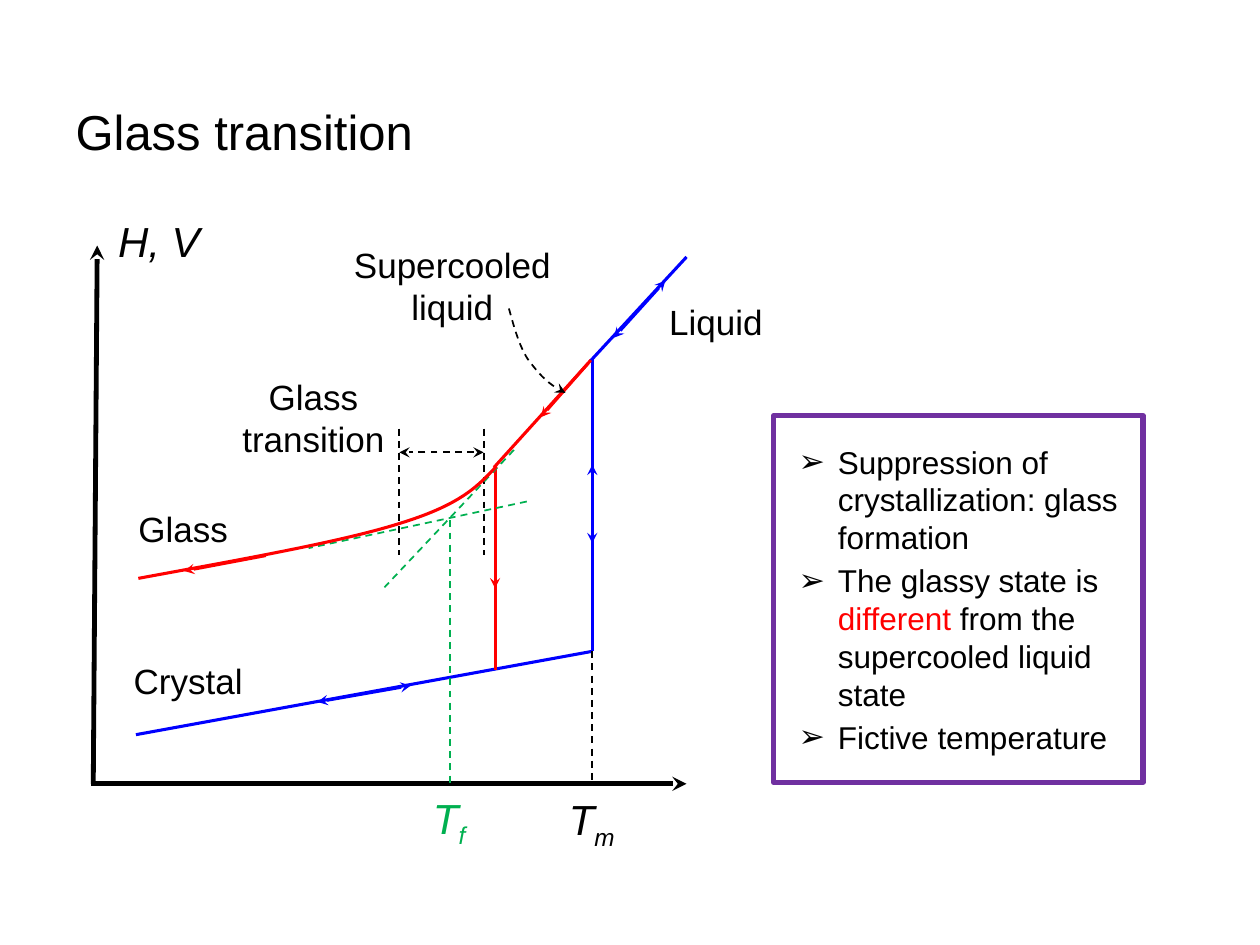
from lxml import etree
from pptx import Presentation
from pptx.dml.color import RGBColor
from pptx.enum.dml import MSO_LINE
from pptx.enum.shapes import MSO_CONNECTOR
from pptx.enum.text import MSO_ANCHOR, MSO_AUTO_SIZE, PP_ALIGN
from pptx.oxml.ns import qn
from pptx.util import Cm, Pt

STRAIGHT = MSO_CONNECTOR.STRAIGHT
DASH = MSO_LINE.DASH
MIDDLE = MSO_ANCHOR.MIDDLE
FIXED = MSO_AUTO_SIZE.NONE
LEFT, CENTER = PP_ALIGN.LEFT, PP_ALIGN.CENTER

BLACK = RGBColor(0, 0, 0)
RED = RGBColor(255, 0, 0)
BLUE = RGBColor(0, 0, 255)
GREEN = RGBColor(0, 0xB0, 0x50)
PURPLE = RGBColor(0x70, 0x30, 0xA0)
FONT = "Arial"

# All positions are in centimetres.
AXIS_Y = 15.8
MELT_X, MELT_Y = 11.94, 13.13
QUENCH_X = 9.98
FICTIVE_X = 9.07
RANGE_LEFT, RANGE_RIGHT = 8.05, 9.75

TITLE = "Glass transition"
POINTS = [
    [("Suppression of crystallization: glass formation", BLACK)],
    [("The glassy state is ", BLACK), ("different", RED),
     (" from the supercooled liquid state", BLACK)],
    [("Fictive temperature", BLACK)],
]

# text, left, top, width, height
STATE_LABELS = [
    ("Supercooled liquid", 6.68, 4.78, 4.88, 1.96),
    ("Crystal", 2.26, 13.18, 3.07, 1.12),
    ("Liquid", 12.9, 5.94, 3.07, 1.12),
    ("Glass", 2.16, 10.11, 3.07, 1.12),
    ("Glass transition", 4.34, 7.44, 3.96, 1.96),
]
# symbol, subscript, left, top, width, alignment, colour
SYMBOLS = [
    ("H, V", "", 2.13, 4.22, 2.18, LEFT, BLACK),
    ("T", "m", 11.18, 15.88, 1.5, CENTER, BLACK),
    ("T", "f", 8.46, 15.85, 1.19, CENTER, GREEN),
]

# start, end, arrowheads
AXES = [
    ((1.83, AXIS_Y), (13.84, AXIS_Y), ["tailEnd"]),
    ((1.88, AXIS_Y), (1.96, 4.95), ["tailEnd"]),
]
BOTH = ["headEnd", "tailEnd"]
EQUILIBRIUM = [
    ((13.84, 5.18), (11.89, 7.29), []),
    ((MELT_X, 7.24), (MELT_X, MELT_Y), []),
    ((MELT_X, MELT_Y), (2.74, 14.81), []),
    ((13.41, 5.66), (12.37, 6.81), BOTH),
    ((MELT_X, 9.37), (MELT_X, 10.95), BOTH),
    ((8.28, 13.82), (6.4, 14.15), BOTH),
]
COOLING = [
    ((11.86, 7.32), (9.96, 9.42), []),
    ((11.91, 7.26), (10.9, 8.41), ["tailEnd"]),
    ((QUENCH_X, 9.45), (QUENCH_X, 13.51), []),
    ((QUENCH_X, 10.54), (QUENCH_X, 11.86), ["tailEnd"]),
    ((5.36, 11.2), (3.71, 11.51), ["tailEnd"]),
]
MARKERS = [
    ((MELT_X, MELT_Y), (MELT_X, 15.72), []),
    ((RANGE_RIGHT, 8.64), (RANGE_RIGHT, 11.18), []),
    ((RANGE_LEFT, 8.64), (RANGE_LEFT, 11.18), []),
    ((RANGE_RIGHT, 9.12), (RANGE_LEFT, 9.12), BOTH),
]
TANGENTS = [
    ((10.62, 10.11), (6.22, 11.05), []),
    ((10.36, 9.07), (7.75, 11.84), []),
    ((FICTIVE_X, 10.49), (FICTIVE_X, 15.82), []),
]
# lines, colour, width in points, dash
LINE_SETS = [
    (AXES, BLACK, 2.75, None),
    (EQUILIBRIUM, BLUE, 1.75, None),
    (COOLING, RED, 1.75, None),
    (MARKERS, BLACK, 1, DASH),
    (TANGENTS, GREEN, 1, DASH),
]

# Start point, then two control points and an end point for each segment
GLASS_CURVE = [(10.01, 9.4), (9.65, 9.78), (9.32, 10.16), (8.1, 10.54),
               (6.91, 10.92), (4.85, 11.28), (2.79, 11.66)]
POINTER_CURVE = [(10.26, 6.22), (10.36, 6.58), (10.46, 6.96), (10.64, 7.24),
                 (10.85, 7.52), (11.07, 7.77), (11.4, 7.92)]


def style_line(shape, color, width, dash=None, heads=()):
    line = shape.line
    line.color.rgb = color
    line.width = Pt(width)
    if dash:
        line.dash_style = dash
    properties = shape._element.spPr
    for head in heads:
        etree.SubElement(properties.find(qn("a:ln")), qn("a:" + head), type="stealth")
    if properties.find(qn("a:effectLst")) is None:
        etree.SubElement(properties, qn("a:effectLst"))


def add_curve(page, points):
    """Draw an open cubic Bezier path."""
    corners = [(Cm(x), Cm(y)) for x, y in points]
    builder = page.shapes.build_freeform(*corners[0])
    builder.add_line_segments(corners[1:], close=False)
    curve = builder.convert_to_shape()
    curve.fill.background()
    curve.shadow.inherit = False
    steps = list(curve._element.iter(qn("a:lnTo")))
    for start in range(0, len(steps), 3):
        first, *others = steps[start:start + 3]
        first.tag = qn("a:cubicBezTo")
        for step in others:
            first.append(step[0])
            step.getparent().remove(step)
    return curve


def format_font(paragraph, size, color=BLACK, italic=False):
    font = paragraph.font
    font.name, font.size, font.italic = FONT, Pt(size), italic
    font.color.rgb = color


def add_label(page, left, top, width, height, align, wrap):
    box = page.shapes.add_textbox(Cm(left), Cm(top), Cm(width), Cm(height))
    box.text_frame.word_wrap = wrap
    paragraph = box.text_frame.paragraphs[0]
    paragraph.alignment = align
    return paragraph


def place(shape, left, top, width, height):
    shape.left, shape.top = Cm(left), Cm(top)
    shape.width, shape.height = Cm(width), Cm(height)
    shape.text_frame.auto_size = FIXED
    shape.text_frame.vertical_anchor = MIDDLE


def fill_summary(box):
    place(box, 15.6, 8.38, 7.44, 7.39)
    style_line(box, PURPLE, 3)
    frame = box.text_frame
    frame.margin_left = frame.margin_right = Cm(0.5)
    for index, spans in enumerate(POINTS):
        paragraph = frame.add_paragraph() if index else frame.paragraphs[0]
        properties = paragraph._p.get_or_add_pPr()
        properties.set("marL", str(Cm(0.79)))
        properties.set("indent", str(-Cm(0.79)))
        etree.SubElement(properties, qn("a:buChar"), char="➢")
        paragraph.space_before = Pt(3 if index else 0)
        format_font(paragraph, 18)
        for text, color in spans:
            span = paragraph.add_run()
            span.text = text
            span.font.color.rgb = color


def main():
    deck = Presentation()
    deck.slide_width, deck.slide_height = Cm(25.4), Cm(19.05)
    page = deck.slides.add_slide(deck.slide_layouts[1])

    title, summary = page.placeholders
    place(title, 1.27, 1.27, 22.66, 2.74)
    title.text_frame.text = TITLE
    title.text_frame.paragraphs[0].alignment = LEFT
    format_font(title.text_frame.paragraphs[0], 28)
    fill_summary(summary)

    for lines, color, width, dash in LINE_SETS:
        for start, end, heads in lines:
            ends = [Cm(value) for value in start + end]
            style_line(page.shapes.add_connector(STRAIGHT, *ends), color, width, dash, heads)
    style_line(add_curve(page, GLASS_CURVE), RED, 1.75)
    style_line(add_curve(page, POINTER_CURVE), BLACK, 1, DASH, ["tailEnd"])

    for text, *area in STATE_LABELS:
        paragraph = add_label(page, *area, CENTER, True)
        format_font(paragraph, 20)
        paragraph.add_run().text = text
    for symbol, subscript, left, top, width, align, color in SYMBOLS:
        paragraph = add_label(page, left, top, width, 1.27, align, False)
        format_font(paragraph, 24, color, italic=True)
        paragraph.add_run().text = symbol
        if subscript:
            span = paragraph.add_run()
            span.text = subscript
            span.font._element.set("baseline", "-25000")

    deck.save("out.pptx")


if __name__ == "__main__":
    main()
